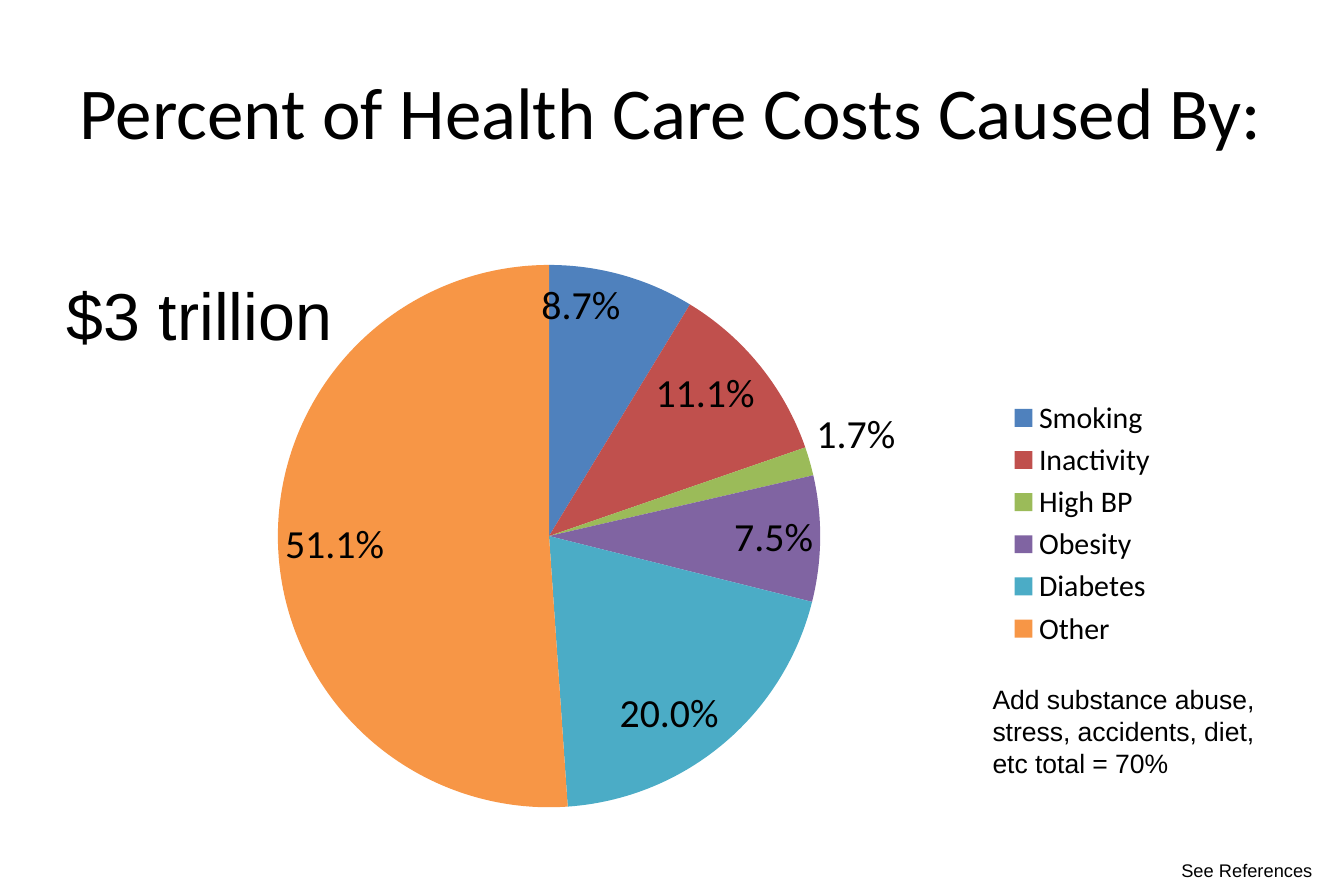
from dataclasses import dataclass

from lxml import etree
from pptx import Presentation
from pptx.chart.data import CategoryChartData
from pptx.dml.color import RGBColor
from pptx.enum.chart import XL_CHART_TYPE, XL_LABEL_POSITION, XL_LEGEND_POSITION
from pptx.enum.text import MSO_ANCHOR, PP_ALIGN
from pptx.oxml.ns import qn
from pptx.util import Inches, Pt

PIE = XL_CHART_TYPE.PIE
INSIDE = XL_LABEL_POSITION.INSIDE_END
OUTSIDE = XL_LABEL_POSITION.OUTSIDE_END
RIGHT = XL_LEGEND_POSITION.RIGHT
TOP, MIDDLE = MSO_ANCHOR.TOP, MSO_ANCHOR.MIDDLE
LEFT, CENTER = PP_ALIGN.LEFT, PP_ALIGN.CENTER


@dataclass(frozen=True)
class Theme:
    """Colours, fonts and type sizes of the slide."""

    text: str = "000000"
    heading_font: str = "Calibri"
    body_font: str = "Arial"
    title: int = 44
    amount: int = 40
    label: int = 24
    legend: int = 18
    note: int = 16
    reference: int = 11


THEME = Theme()
PERCENT = "0.0%"
COSTS = [
    ("Smoking", 0.087, "4F81BD"),
    ("Inactivity", 0.11, "C0504D"),
    ("High BP", 0.017, "9BBB59"),
    ("Obesity", 0.075, "8064A2"),
    ("Diabetes", 0.2, "4BACC6"),
    ("Other", 0.511, "F79646"),
]
PIE_LAYOUT = {"x": 0.104, "y": 0.101, "w": 0.545, "h": 0.838}


def set_font(font, size, name):
    """Apply a size, a typeface and the text colour to a font."""
    font.size = Pt(size)
    font.name = name
    font.color.rgb = RGBColor.from_string(THEME.text)


def add_text(s, text, box, size, font=THEME.body_font, align=LEFT, anchor=TOP, wrap=True):
    """Add a text box holding one paragraph."""
    tf = s.shapes.add_textbox(*map(Inches, box)).text_frame
    tf.word_wrap = wrap
    tf.vertical_anchor = anchor
    p = tf.paragraphs[0]
    p.alignment = align
    r = p.add_run()
    r.text = text
    set_font(r.font, size, font)


def place_plot(chart, layout):
    """Fix the inner plot area at fractions of the chart frame."""
    area = chart.plots[0]._element.getparent()
    for old in area.findall(qn("c:layout")):
        area.remove(old)
    holder = etree.Element(qn("c:layout"))
    manual = etree.SubElement(holder, qn("c:manualLayout"))
    settings = {"layoutTarget": "inner", "xMode": "edge", "yMode": "edge", **layout}
    for tag, value in settings.items():
        etree.SubElement(manual, qn(f"c:{tag}")).set("val", str(value))
    area.insert(0, holder)


def label_slices(series):
    """Show percentages, with one worded label and one outside the pie."""
    labels = series.data_labels
    labels.show_value = True
    labels.show_percentage = False
    labels.number_format = PERCENT
    labels.number_format_is_linked = False
    labels.position = INSIDE
    set_font(labels.font, THEME.label, THEME.heading_font)

    inactivity = series.points[1].data_label
    r = inactivity.text_frame.paragraphs[0].add_run()
    r.text = "11.1%"
    set_font(r.font, THEME.label, THEME.heading_font)
    inactivity.position = INSIDE

    high_bp = series.points[2].data_label
    set_font(high_bp.font, THEME.label, THEME.heading_font)
    high_bp.position = OUTSIDE


def add_cost_pie(s, box):
    """Add the pie of health care costs with its legend."""
    names, values, colours = zip(*COSTS)
    data = CategoryChartData(number_format=PERCENT)
    data.categories = names
    data.add_series("Series 1", values)
    chart = s.shapes.add_chart(PIE, *map(Inches, box), data).chart
    set_font(chart.font, THEME.legend, THEME.heading_font)
    chart.has_title = False
    chart.has_legend = True
    chart.legend.position = RIGHT
    chart.legend.include_in_layout = False
    plot = chart.plots[0]
    plot.vary_by_categories = True
    series = plot.series[0]
    for i, colour in enumerate(colours):
        fill = series.points[i].format.fill
        fill.solid()
        fill.fore_color.rgb = RGBColor.from_string(colour)
    label_slices(series)
    place_plot(chart, PIE_LAYOUT)


def main():
    """Build the slide and save it."""
    prs = Presentation()
    prs.slide_width, prs.slide_height = Inches(11.25), Inches(7.5)
    s = prs.slides.add_slide(prs.slide_layouts[6])
    add_text(s, "Percent of Health Care Costs Caused By:", (0.56, 0.3, 10.12, 1.25),
             THEME.title, font=THEME.heading_font, align=CENTER, anchor=MIDDLE)
    add_cost_pie(s, (1.46, 1.67, 8.33, 5.42))
    add_text(s, "See References", (9.79, 7.14, 1.33, 0.29), THEME.reference)
    add_text(s, "$3 trillion", (0.46, 2.25, 2.45, 0.77), THEME.amount, wrap=False)
    add_text(s, "Add substance abuse, stress, accidents, diet, etc total = 70%",
             (8.21, 5.67, 2.67, 0.91), THEME.note)
    prs.save("out.pptx")


if __name__ == "__main__":
    main()
